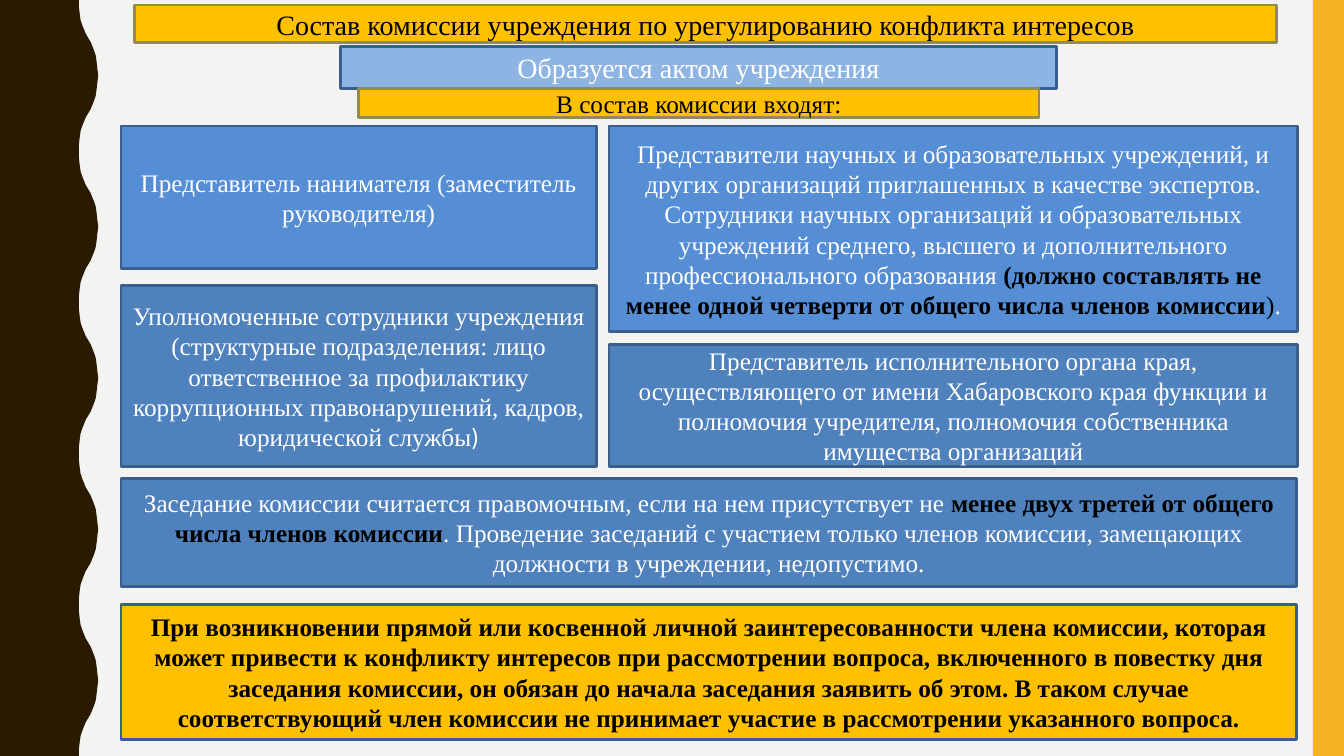
import pptx
import pptx.dml.color
import pptx.enum.shapes
import pptx.enum.text
import pptx.util

RGBColor = pptx.dml.color.RGBColor
PAPER = RGBColor(0xF3, 0xF3, 0xF1)
BROWN = RGBColor(0x2A, 0x1A, 0x00)
AMBER = RGBColor(0xF8, 0xB3, 0x22)
GOLD = RGBColor(0xFF, 0xC0, 0x00)
OLIVE = RGBColor(0x94, 0x8A, 0x54)
LIGHT_BLUE = RGBColor(0x8E, 0xB4, 0xE3)
MID_BLUE = RGBColor(0x55, 0x8E, 0xD5)
BLUE = RGBColor(0x4F, 0x81, 0xBD)
NAVY = RGBColor(0x3A, 0x5F, 0x8C)
WHITE = RGBColor(0xFF, 0xFF, 0xFF)
BLACK = RGBColor(0x00, 0x00, 0x00)

COLUMNS, ROWS = 160, 90
LEFT, RIGHT = 14.4, 72.5
LEFT_WIDTH, RIGHT_WIDTH, FULL_WIDTH = 56.6, 82, 140

PLAIN = {"name": "Times New Roman", "size": pptx.util.Pt(18), "bold": False, "color": WHITE}
LARGE = PLAIN | {"size": pptx.util.Pt(20)}
DARK = PLAIN | {"color": BLACK}
STRONG = DARK | {"bold": True}
SANS = PLAIN | {"name": "Calibri"}

# Half a wave as (column, row), from trough to crest
HALF_WAVE = [(9.4, 0), (9.4, 0.8), (9.5, 1.7), (9.6, 2.4), (9.8, 3), (10, 3.5), (10.2, 4),
             (10.8, 5), (11, 5.5), (11.2, 6), (11.4, 6.6), (11.5, 7.3), (11.6, 8.2), (11.7, 9)]
WAVE_HEIGHT = 18


class SlideBuilder:
    def __init__(self, deck):
        self.cell_width = deck.slide_width / COLUMNS
        self.cell_height = deck.slide_height / ROWS
        self.slide = deck.slides.add_slide(deck.slide_layouts[5])
        background = self.slide.background.fill
        background.solid()
        background.fore_color.rgb = PAPER

    def point(self, column, row):
        return round(column * self.cell_width), round(row * self.cell_height)

    def paint(self, shape, fill, line=None):
        shape.fill.solid()
        shape.fill.fore_color.rgb = fill
        if line is None:
            shape.line.fill.background()
        else:
            shape.line.color.rgb = line
            shape.line.width = pptx.util.Pt(2)

    def rectangle(self, area, fill, line=None):
        column, row, width, height = area
        box = self.slide.shapes.add_shape(
            pptx.enum.shapes.MSO_SHAPE.RECTANGLE,
            *self.point(column, row), *self.point(width, height))
        box.shadow.inherit = False
        self.paint(box, fill, line)
        return box

    def wavy_edge(self, fill):
        wave = HALF_WAVE + [(column, WAVE_HEIGHT - row) for column, row in HALF_WAVE[-2::-1]]
        edge = [self.point(column, top + row)
                for top in range(0, ROWS, WAVE_HEIGHT) for column, row in wave]
        builder = self.slide.shapes.build_freeform(0, 0)
        builder.add_line_segments(edge + [self.point(0, ROWS)], close=True)
        shape = builder.convert_to_shape()
        shape.shadow.inherit = False
        self.paint(shape, fill)

    def fill_text(self, shape, paragraphs):
        """Fill a shape with paragraphs, each a list of (text, format) pairs."""
        frame = shape.text_frame
        layout = {"word_wrap": True, "auto_size": pptx.enum.text.MSO_AUTO_SIZE.NONE,
                  "vertical_anchor": pptx.enum.text.MSO_ANCHOR.MIDDLE}
        for name, value in layout.items():
            setattr(frame, name, value)
        for index, spans in enumerate(paragraphs):
            para = frame.add_paragraph() if index else frame.paragraphs[0]
            para.alignment = pptx.enum.text.PP_ALIGN.CENTER
            for text, style in spans:
                span = para.add_run()
                span.text = text
                for name, value in style.items():
                    if name == "color":
                        span.font.color.rgb = value
                    else:
                        setattr(span.font, name, value)

    def title(self, area, text, style, fill, line):
        title = self.slide.shapes.title
        column, row, width, height = area
        title.left, title.top = self.point(column, row)
        title.width, title.height = self.point(width, height)
        self.paint(title, fill, line)
        self.fill_text(title, [[(text, style)]])

    def text_box(self, area, fill, *paragraphs, line=NAVY):
        self.fill_text(self.rectangle(area, fill, line), paragraphs)


def main():
    deck = pptx.Presentation()
    deck.slide_width = pptx.util.Inches(13.33)
    deck.slide_height = pptx.util.Inches(7.5)
    page = SlideBuilder(deck)

    page.wavy_edge(BROWN)
    page.rectangle((156.3, 0, 3.7, ROWS), AMBER)

    page.title((16, 0.6, 136, 4.5),
               "Состав комиссии учреждения по урегулированию конфликта интересов",
               LARGE | {"color": BLACK}, GOLD, OLIVE)
    page.text_box((40.5, 5.5, 85.3, 5), LIGHT_BLUE, [("Образуется актом учреждения", LARGE)])
    page.text_box((42.7, 10.5, 81, 3.5), GOLD, [("В состав комиссии входят:", DARK)], line=OLIVE)

    page.text_box((LEFT, 15, LEFT_WIDTH, 17), MID_BLUE, [
        ("Представитель нанимателя (заместитель руководителя)", PLAIN)])
    page.text_box((LEFT, 34, LEFT_WIDTH, 21.5), BLUE, [
        ("Уполномоченные сотрудники учреждения (структурные подразделения: лицо ответственное "
         "за профилактику коррупционных правонарушений, кадров, юридической службы", PLAIN),
        (")", SANS)])
    page.text_box((RIGHT, 15, RIGHT_WIDTH, 24.5), MID_BLUE, [
        ("Представители научных и образовательных учреждений, и других организаций "
         "приглашенных в качестве экспертов.", PLAIN)], [
        ("Сотрудники научных организаций и образовательных учреждений среднего, высшего "
         "и дополнительного профессионального образования ", PLAIN),
        ("(должно составлять не менее одной четверти от общего числа членов комиссии", STRONG),
        (")", DARK),
        (".", PLAIN)])
    page.text_box((RIGHT, 41, RIGHT_WIDTH, 14.5), BLUE, [
        ("Представитель исполнительного органа края, осуществляющего от имени Хабаровского края "
         "функции и полномочия учредителя, полномочия собственника имущества организаций", PLAIN)])

    page.text_box((LEFT, 57, FULL_WIDTH, 12.8), BLUE, [
        ("Заседание комиссии считается правомочным, если на нем присутствует не ", PLAIN),
        ("менее двух третей от общего числа членов комиссии", STRONG),
        (". Проведение заседаний с участием только членов комиссии, замещающих должности "
         "в учреждении, недопустимо.", PLAIN)])
    page.text_box((LEFT, 72, FULL_WIDTH, 16), GOLD, [
        ("При возникновении прямой или косвенной личной заинтересованности члена комиссии, "
         "которая может привести к конфликту интересов при рассмотрении вопроса, включенного "
         "в повестку дня заседания комиссии, он обязан до начала заседания заявить об этом. "
         "В таком случае соответствующий член комиссии не принимает участие в рассмотрении "
         "указанного вопроса.", STRONG)])

    deck.save("out.pptx")


if __name__ == "__main__":
    main()
